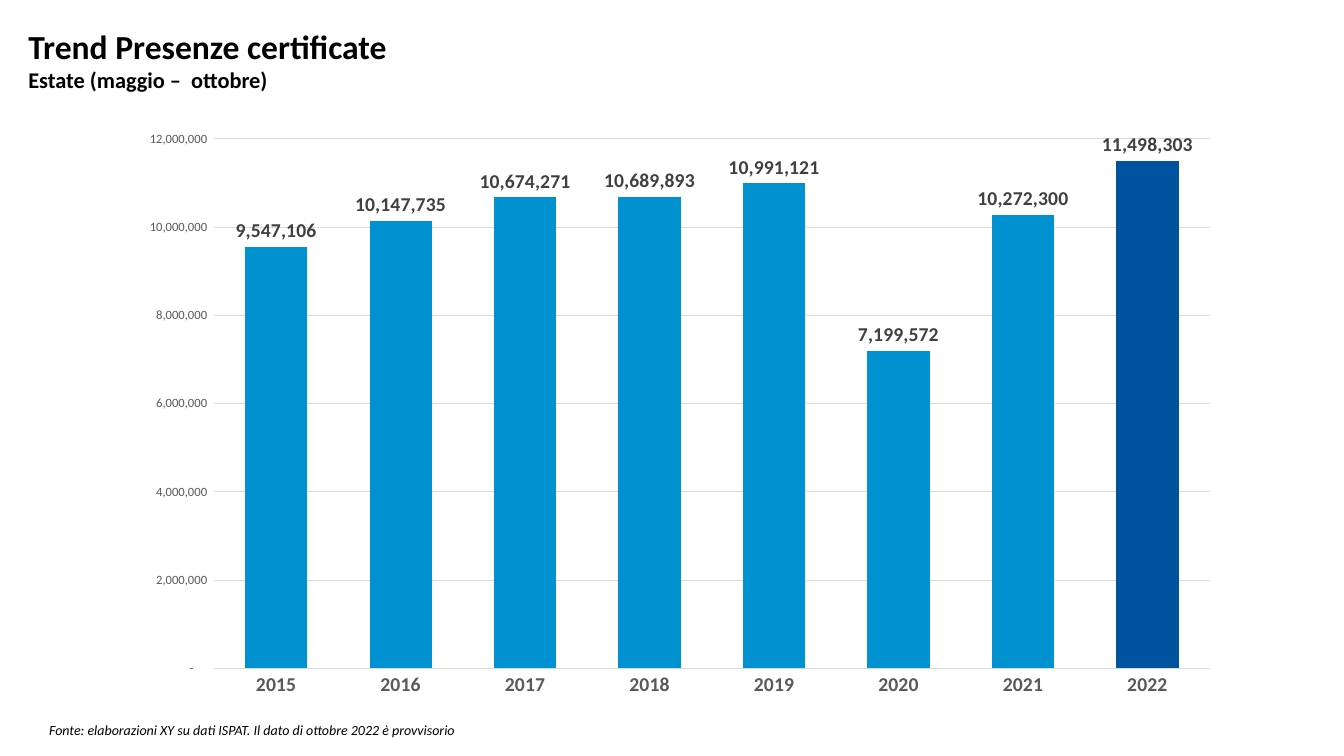
from lxml import etree
from pptx import Presentation
from pptx.chart import data
from pptx.dml.color import RGBColor
from pptx.enum import chart as chart_enum, text
from pptx.oxml import ns
from pptx.util import Pt

FONT = "Calibri"
COLOURS = {
    "text": "000000",
    "label": "404040",
    "axis": "595959",
    "grid": "D9D9D9",
    "summer": "0092D0",
    "latest": "00539F",
}
PRESENCES = {
    "2015": 9547106,
    "2016": 10147735,
    "2017": 10674271,
    "2018": 10689893,
    "2019": 10991121,
    "2020": 7199572,
    "2021": 10272300,
    "2022": 11498303,
}
AXIS_FORMAT = '_-* #,##0_-;\\-* #,##0_-;_-* "-"??_-;_-@_'
PLOT_AREA = {"x": 0.085, "y": 0.018, "w": 0.903, "h": 0.901}


def colour(name):
    return RGBColor.from_string(COLOURS[name])


def style_font(font, size, colour_name, bold=False, italic=False):
    font.name = FONT
    font.size = Pt(size)
    font.bold = bold
    font.italic = italic
    font.color.rgb = colour(colour_name)


def style_line(line, colour_name):
    line.color.rgb = colour(colour_name)
    line.width = Pt(0.75)


def add_heading(slide, left, top, width, height):
    title = slide.shapes.title
    title.left, title.top, title.width, title.height = map(Pt, (left, top, width, height))
    frame = title.text_frame
    frame.text = "Trend Presenze certificate\nEstate (maggio –  ottobre)"
    frame.auto_size = text.MSO_AUTO_SIZE.NONE
    frame.vertical_anchor = text.MSO_ANCHOR.MIDDLE
    for paragraph, size in zip(frame.paragraphs, (24, 16)):
        paragraph.alignment = text.PP_ALIGN.LEFT
        paragraph.space_before = Pt(0)
        style_font(paragraph.runs[0].font, size, "text", bold=True)


def set_plot_layout(chart):
    plot_area = chart.element.find(".//" + ns.qn("c:plotArea"))
    for old_layout in plot_area.findall(ns.qn("c:layout")):
        plot_area.remove(old_layout)
    layout = etree.Element(ns.qn("c:layout"))
    manual = etree.SubElement(layout, ns.qn("c:manualLayout"))
    settings = {"layoutTarget": "inner", "xMode": "edge", "yMode": "edge", **PLOT_AREA}
    for tag, value in settings.items():
        etree.SubElement(manual, ns.qn("c:" + tag)).set("val", str(value))
    plot_area.insert(0, layout)


def style_axes(chart):
    years, amounts = chart.category_axis, chart.value_axis
    for axis in (years, amounts):
        axis.major_tick_mark = chart_enum.XL_TICK_MARK.NONE
        axis.minor_tick_mark = chart_enum.XL_TICK_MARK.NONE
    style_font(years.tick_labels.font, 14, "axis", bold=True)
    style_line(years.format.line, "grid")
    style_font(amounts.tick_labels.font, 9, "axis")
    amounts.tick_labels.number_format = AXIS_FORMAT
    amounts.tick_labels.number_format_is_linked = False
    amounts.minimum_scale = 0
    amounts.maximum_scale = 12000000
    amounts.major_unit = 2000000
    amounts.format.line.fill.background()
    style_line(amounts.major_gridlines.format.line, "grid")


def style_columns(chart):
    plot = chart.plots[0]
    plot.gap_width = 100
    plot.overlap = -27
    plot.vary_by_categories = False
    series = plot.series[0]
    series.invert_if_negative = False
    latest = series.points[len(PRESENCES) - 1]
    for item, name in ((series, "summer"), (latest, "latest")):
        item.format.fill.solid()
        item.format.fill.fore_color.rgb = colour(name)
    labels = series.data_labels
    labels.show_value = True
    labels.position = chart_enum.XL_LABEL_POSITION.OUTSIDE_END
    labels.number_format = "#,##0"
    labels.number_format_is_linked = False
    style_font(labels.font, 14, "label", bold=True)


def add_presences_chart(slide, left, top, width, height):
    chart_data = data.CategoryChartData(number_format="#,##0")
    chart_data.categories = PRESENCES.keys()
    chart_data.add_series("Presenze", PRESENCES.values())
    chart = slide.shapes.add_chart(
        chart_enum.XL_CHART_TYPE.COLUMN_CLUSTERED,
        Pt(left), Pt(top), Pt(width), Pt(height), chart_data,
    ).chart
    chart.has_title = False
    chart.has_legend = False
    style_font(chart.font, 10, "text")
    set_plot_layout(chart)
    style_axes(chart)
    style_columns(chart)


def add_source_note(slide, left, top, width, height):
    frame = slide.shapes.add_textbox(Pt(left), Pt(top), Pt(width), Pt(height)).text_frame
    frame.word_wrap = True
    frame.auto_size = text.MSO_AUTO_SIZE.SHAPE_TO_FIT_TEXT
    frame.text = "Fonte: elaborazioni XY su dati ISPAT. Il dato di ottobre 2022 è provvisorio"
    paragraph = frame.paragraphs[0]
    paragraph.alignment = text.PP_ALIGN.JUSTIFY
    paragraph.line_spacing = 1.07
    paragraph.space_after = Pt(8)
    style_font(paragraph.runs[0].font, 10, "text", italic=True)


def main():
    presentation = Presentation()
    presentation.slide_width = Pt(960)
    presentation.slide_height = Pt(540)
    slide = presentation.slides.add_slide(presentation.slide_layouts[5])
    add_heading(slide, 13, 15.8, 510.5, 53.3)
    add_source_note(slide, 28, 511.2, 725.8, 19.4)
    add_presences_chart(slide, 85.9, 91.7, 787.7, 419.8)
    presentation.save("out.pptx")


if __name__ == "__main__":
    main()
